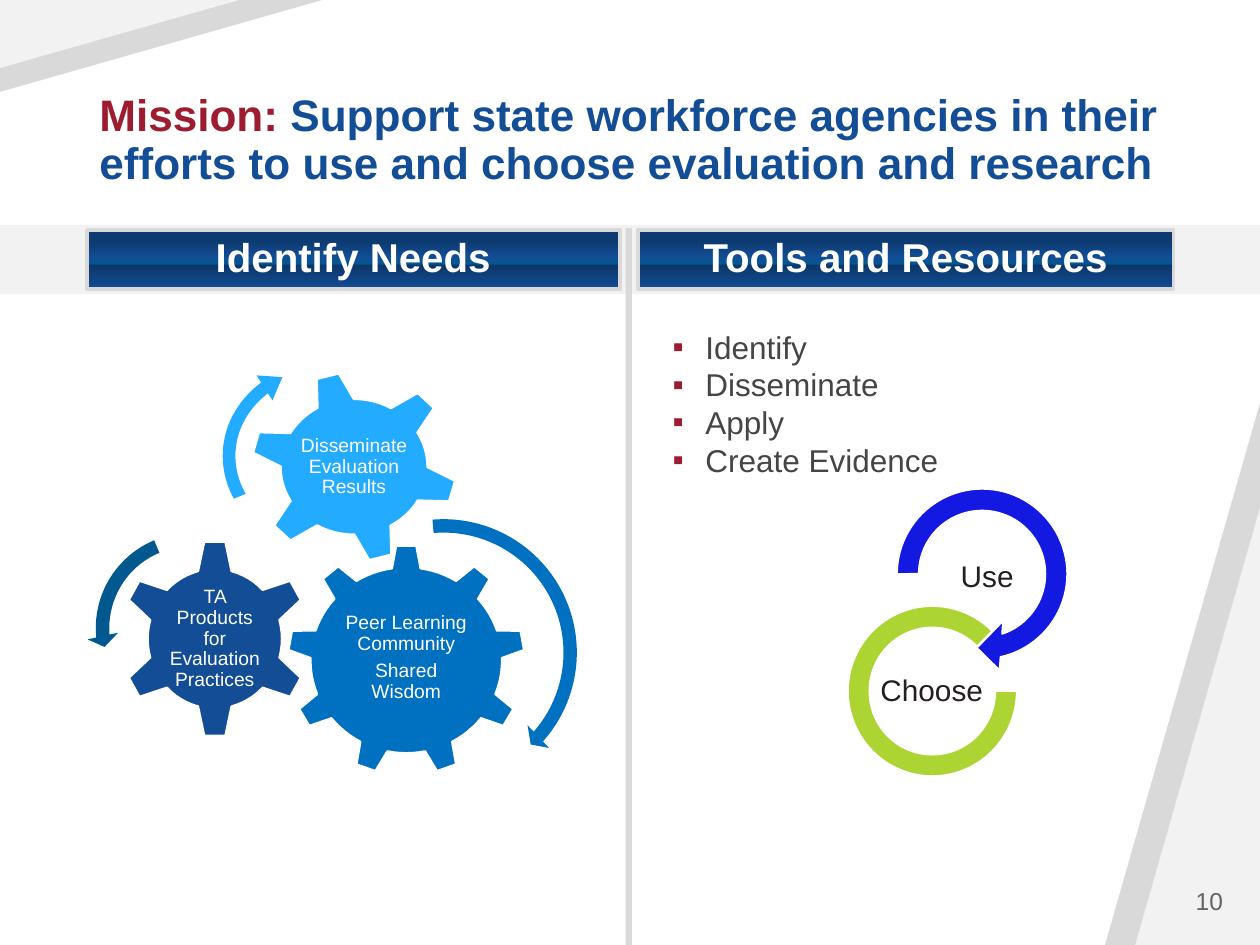
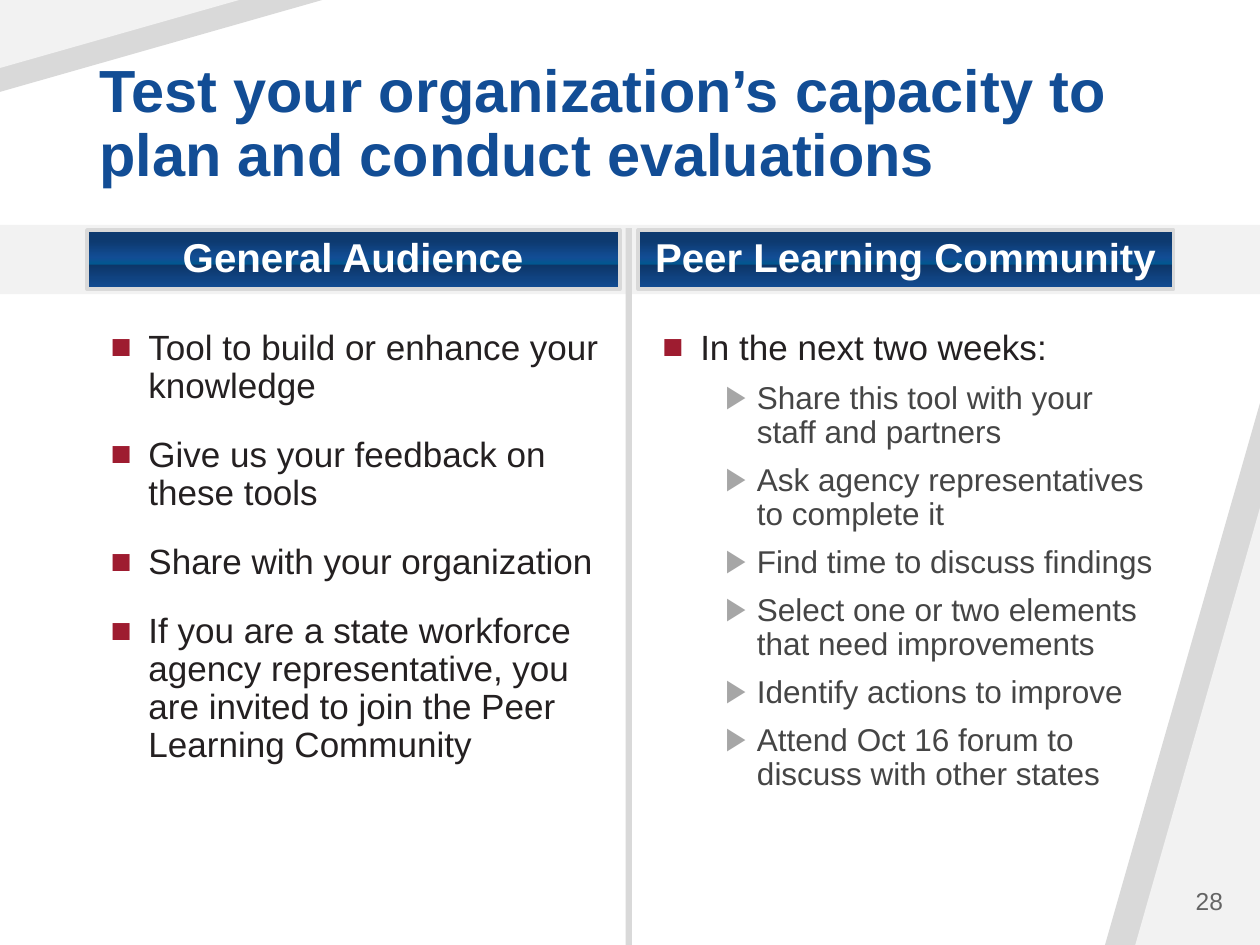
import dataclasses
import math
import typing

import lxml.etree
import pptx
import pptx.dml.color
import pptx.enum.shapes
import pptx.enum.text
import pptx.oxml.ns
import pptx.util

SHAPE = pptx.enum.shapes.MSO_SHAPE
ALIGN = pptx.enum.text.PP_ALIGN
ANCHOR = pptx.enum.text.MSO_ANCHOR
qn = pptx.oxml.ns.qn

# The slide is a grid of 100 columns by 75 rows of square cells.
COLUMNS, ROWS = 100, 75
CELL = pptx.util.Inches(10) / COLUMNS


@dataclasses.dataclass(frozen=True)
class Theme:
    font: str = "Arial"
    white: str = "FFFFFF"
    ink: str = "242021"
    soft_ink: str = "454545"
    number_grey: str = "646464"
    marker_grey: str = "A6A6A6"
    dark_band: str = "D9D9D9"
    light_band: str = "F2F2F2"
    red: str = "9E1C30"
    navy: str = "124D95"
    teal: str = "00588F"
    blue: str = "0070C0"
    sky: str = "23ACFF"
    violet: str = "1419E2"
    green: str = "ACD433"
    header_stops: tuple = ((19, "0D3A70"), (47, "124D95"), (58, "00588F"),
                           (59, "0D3668"), (100, "124D95"))
    mission_size: float = 25.2
    title_size: float = 34
    header_size: float = 23
    body_size: float = 20
    detail_size: float = 18
    cycle_size: float = 17
    number_size: float = 14
    gear_size: float = 11


THEME = Theme()


class Box(typing.NamedTuple):
    """Left, top, width and height in grid cells."""
    left: float
    top: float
    width: float
    height: float


class Bullet(typing.NamedTuple):
    mark: str
    color: str
    indent: float
    hanging: float
    level: int = 0


@dataclasses.dataclass(frozen=True)
class Arc:
    kind: typing.Any
    box: Box
    adjustments: tuple
    color: str
    outline: typing.Optional[str] = None
    rotation: float = 0


@dataclasses.dataclass(frozen=True)
class Gear:
    center: tuple
    stretch: tuple  # horizontal and vertical factor
    teeth: int
    first_angle: float
    tip: tuple      # distance from the centre, half width
    root: tuple
    color: str
    insets: tuple
    lines: tuple


SQUARE = Bullet("■", THEME.red, 3, 3)
SMALL_SQUARE = Bullet("▪", THEME.red, 2.6, 2.6)
TRIANGLE = Bullet("▶", THEME.marker_grey, 7.5, 2.5, level=1)
TITLE_BOX = Box(6.9, 4, 86.2, 11.5)
HEADER_BOXES = (Box(6.9, 18.25, 42.3, 4.7), Box(50.65, 18.25, 42.5, 4.7))
BODY_BOXES = (Box(7.8, 25.7, 41, 42), Box(51.6, 25.7, 41, 42))
NUMBER_BOX = Box(84.05, 69.5, 14, 4)


def cells(count: float) -> int:
    return round(count * CELL)


def rgb(color: str):
    return pptx.dml.color.RGBColor.from_string(color)


# Text
def set_bullet(paragraph, bullet: Bullet) -> None:
    paragraph.level = bullet.level
    properties = paragraph._p.get_or_add_pPr()
    properties.set("marL", str(cells(bullet.indent)))
    properties.set("indent", str(-cells(bullet.hanging)))
    color = lxml.etree.SubElement(properties, qn("a:buClr"))
    lxml.etree.SubElement(color, qn("a:srgbClr"), val=bullet.color)
    lxml.etree.SubElement(properties, qn("a:buFont"), typeface=THEME.font)
    lxml.etree.SubElement(properties, qn("a:buChar"), char=bullet.mark)


def add_paragraph(shape, text: str, *, size: float, color: str, bold: bool = False,
                  align=ALIGN.LEFT, line_spacing: float = 0.9, before: float = 0,
                  after: float = 0, bullet: typing.Optional[Bullet] = None,
                  lead: str = "", lead_color: str = "") -> None:
    frame = shape.text_frame
    is_first = not frame.paragraphs[0].runs
    paragraph = frame.paragraphs[0] if is_first else frame.add_paragraph()
    if bullet:
        set_bullet(paragraph, bullet)
    paragraph.alignment = align
    paragraph.line_spacing = line_spacing
    paragraph.space_before = pptx.util.Pt(0 if is_first else before)
    paragraph.space_after = pptx.util.Pt(after)
    for words, run_color in ((lead, lead_color), (text, color)):
        if words:
            run = paragraph.add_run()
            run.text = words
            run.font.name = THEME.font
            run.font.size = pptx.util.Pt(size)
            run.font.bold = bold
            run.font.color.rgb = rgb(run_color)


def set_frame(shape, anchor, insets: tuple) -> None:
    frame = shape.text_frame
    frame.word_wrap = True
    frame.vertical_anchor = anchor
    (frame.margin_left, frame.margin_top,
     frame.margin_right, frame.margin_bottom) = map(cells, insets)


def add_text_box(slide, box: Box, anchor=ANCHOR.TOP, insets: tuple = (1, 0.5, 1, 0.5)):
    text_box = slide.shapes.add_textbox(*map(cells, box))
    set_frame(text_box, anchor, insets)
    return text_box


# Shapes
def paint(shape, color: str, outline: typing.Optional[str] = None, width: float = 1) -> None:
    shape.shadow.inherit = False
    shape.fill.solid()
    shape.fill.fore_color.rgb = rgb(color)
    if outline:
        shape.line.color.rgb = rgb(outline)
        shape.line.width = pptx.util.Pt(width)
    else:
        shape.line.fill.background()


def add_shape(slide, kind, box: Box, color: str, outline: typing.Optional[str] = None,
              width: float = 1, adjustments: tuple = (), rotation: float = 0):
    shape = slide.shapes.add_shape(kind, *map(cells, box))
    for index, value in enumerate(adjustments):
        shape.adjustments[index] = value
    shape.rotation = rotation
    paint(shape, color, outline, width)
    return shape


def set_header_gradient(shape) -> None:
    shape.fill.gradient()
    shape.fill.gradient_angle = 270
    stops = shape._element.spPr.find(qn("a:gradFill")).find(qn("a:gsLst"))
    for stop in list(stops):
        stops.remove(stop)
    for percent, color in THEME.header_stops:
        stop = lxml.etree.SubElement(stops, qn("a:gs"), pos=str(percent * 1000))
        lxml.etree.SubElement(stop, qn("a:srgbClr"), val=color)


def gear_points(gear: Gear) -> list:
    """Outline of the teeth, joined by short steps along the root circle."""
    def place(angle: float, distance: float, offset: float) -> tuple:
        sine, cosine = math.sin(angle), math.cos(angle)
        across = distance * sine + offset * cosine
        down = offset * sine - distance * cosine
        return (cells(gear.center[0] + across * gear.stretch[0]),
                cells(gear.center[1] + down * gear.stretch[1]))

    pitch = math.tau / gear.teeth
    radius = math.hypot(*gear.root)
    half_root = math.atan2(gear.root[1], gear.root[0])
    steps = 6
    points = []
    for tooth in range(gear.teeth):
        angle = math.radians(gear.first_angle) + tooth * pitch
        for (distance, half), side in ((gear.root, -1), (gear.tip, -1),
                                       (gear.tip, 1), (gear.root, 1)):
            points.append(place(angle, distance, side * half))
        for step in range(1, steps):
            along = half_root + (pitch - 2 * half_root) * step / steps
            points.append(place(angle + along, radius, 0))
    return points


def add_gear(slide, gear: Gear) -> None:
    start, *others = gear_points(gear)
    builder = slide.shapes.build_freeform(*start, scale=1.0)
    builder.add_line_segments(others, close=True)
    shape = builder.convert_to_shape()
    paint(shape, gear.color, THEME.white)
    set_frame(shape, ANCHOR.MIDDLE, gear.insets)
    for line in gear.lines:
        add_paragraph(shape, line, size=THEME.gear_size, color=THEME.white,
                      align=ALIGN.CENTER, after=3.85)


def add_arc(slide, arc: Arc) -> None:
    add_shape(slide, arc.kind, arc.box, arc.color, arc.outline,
              adjustments=arc.adjustments, rotation=arc.rotation)


# Parts shared by both slides
def add_background(slide) -> None:
    # Right corner
    for width, height, color in ((12.3, 43, THEME.dark_band), (9.9, 34.7, THEME.light_band)):
        add_shape(slide, SHAPE.ISOSCELES_TRIANGLE,
                  Box(COLUMNS - width, ROWS - height, width, height), color, adjustments=(1,))
    # Left corner: a mirrored triangle turned onto its side
    for width, height, color in ((25.6, 7.3, THEME.dark_band), (19, 5.4, THEME.light_band)):
        shift = (width - height) / 2
        corner = add_shape(slide, SHAPE.ISOSCELES_TRIANGLE, Box(shift, -shift, height, width),
                           color, adjustments=(1,), rotation=270)
        corner._element.spPr.find(qn("a:xfrm")).set("flipV", "1")
    # Header band and column divider
    add_shape(slide, SHAPE.RECTANGLE, Box(0, 17.85, COLUMNS, 5.5), THEME.light_band)
    add_shape(slide, SHAPE.RECTANGLE, Box(49.65, 18.1, 0.5, ROWS - 18.1), THEME.dark_band)


def add_column_slide(presentation, title: str, title_size: float, headers: tuple,
                     number: str, lead: str = ""):
    slide = presentation.slides.add_slide(presentation.slide_layouts[6])
    add_background(slide)
    add_paragraph(add_text_box(slide, TITLE_BOX, ANCHOR.BOTTOM), title, size=title_size,
                  color=THEME.navy, bold=True, lead=lead, lead_color=THEME.red)
    for box, header in zip(HEADER_BOXES, headers):
        shape = add_shape(slide, SHAPE.RECTANGLE, box, THEME.navy, THEME.dark_band, 2)
        set_header_gradient(shape)
        set_frame(shape, ANCHOR.MIDDLE, (0.5, 0.6, 0.5, 0.6))
        add_paragraph(shape, header, size=THEME.header_size, color=THEME.white,
                      bold=True, align=ALIGN.CENTER)
    add_paragraph(add_text_box(slide, NUMBER_BOX, ANCHOR.MIDDLE), number,
                  size=THEME.number_size, color=THEME.number_grey,
                  align=ALIGN.RIGHT, line_spacing=1.0)
    return slide


# Slide content
CYCLE_ARCS = (
    Arc(SHAPE.CIRCULAR_ARROW, Box(70.1, 37.7, 15.7, 15.7),
        (0.11, 11.42, 45, 108, 0.125), THEME.violet, THEME.white),
    Arc(SHAPE.BLOCK_ARC, Box(67.3, 48.1, 13.4, 13.5), (0, 189, 0.127), THEME.green, THEME.white),
)
CYCLE_LABELS = (("Use", Box(74, 43.7, 8.7, 4.4)), ("Choose", Box(69.6, 52.7, 8.7, 4.4)))
GEARS = (
    Gear((32.25, 52.4), (1.02, 0.99), 9, 0, (9.15, 0.77), (7.35, 1.1), THEME.blue,
         (4.1, 4.8, 4.1, 4.9), ("Peer Learning Community", "Shared Wisdom")),
    Gear((17.05, 50.7), (0.97, 1.01), 6, 0, (7.6, 0.85), (5.3, 1.35), THEME.navy,
         (2.8, 3, 2.8, 3), ("TA Products for Evaluation Practices",)),
    Gear((28.1, 37.05), (1.05, 0.97), 6, -15, (7.65, 0.85), (5.35, 1.4), THEME.sky,
         (2.8, 3, 2.8, 3), ("Disseminate Evaluation Results",)),
)
GEAR_ARROWS = (
    Arc(SHAPE.CIRCULAR_ARROW, Box(23.9, 40.5, 22.6, 22.6),
        (0.047, 2.99, 24.91, 159.17, 0.055), THEME.blue),
    Arc(SHAPE.LEFT_CIRCULAR_ARROW, Box(6.9, 41.6, 16.5, 16.5),
        (0.065, 4.3, 104.89, 148.38, 0.075), THEME.teal),
    Arc(SHAPE.CIRCULAR_ARROW, Box(17, 27.9, 18.9, 16.8),
        (0.06, 7.38, 133.14, 92.4, 0.07), THEME.sky, rotation=3.4),
)
RESOURCES = ("Identify", "Disseminate", "Apply", "Create Evidence")
AUDIENCE_POINTS = (
    "Tool to build or enhance your knowledge",
    "Give us your feedback on these tools",
    "Share with your organization",
    "If you are a state workforce agency representative, you are invited to join "
    "the Peer Learning Community",
)
COMMUNITY_STEPS = (
    "Share this tool with your staff and partners",
    "Ask agency representatives to complete it",
    "Find time to discuss findings",
    "Select one or two elements that need improvements",
    "Identify actions to improve",
    "Attend Oct 16 forum to discuss with other states",
)


def build_mission_slide(presentation) -> None:
    slide = add_column_slide(
        presentation, "Support state workforce agencies in their efforts to use and "
        "choose evaluation and research", THEME.mission_size,
        ("Identify Needs", "Tools and Resources"), "10", lead="Mission: ")
    for arc in CYCLE_ARCS:
        add_arc(slide, arc)
    for label, box in CYCLE_LABELS:
        add_paragraph(add_text_box(slide, box, ANCHOR.MIDDLE, (0.1,) * 4), label,
                      size=THEME.cycle_size, color=THEME.ink, align=ALIGN.CENTER, after=5.95)
    for gear in GEARS:
        add_gear(slide, gear)
    for arrow in GEAR_ARROWS:
        add_arc(slide, arrow)
    resources = add_text_box(slide, Box(52.4, 25.5, 29.1, 13.1))
    for resource in RESOURCES:
        add_paragraph(resources, resource, size=THEME.detail_size, color=THEME.soft_ink,
                      line_spacing=1.0, bullet=SMALL_SQUARE)


def build_capacity_slide(presentation) -> None:
    slide = add_column_slide(
        presentation, "Test your organization’s capacity to plan and conduct evaluations",
        THEME.title_size, ("General Audience", "Peer Learning Community"), "28")
    audience, community = (add_text_box(slide, box) for box in BODY_BOXES)
    main_points = [(audience, point) for point in AUDIENCE_POINTS]
    for column, point in main_points + [(community, "In the next two weeks:")]:
        add_paragraph(column, point, size=THEME.body_size, color=THEME.ink,
                      before=18, bullet=SQUARE)
    for step in COMMUNITY_STEPS:
        add_paragraph(community, step, size=THEME.detail_size, color=THEME.soft_ink,
                      before=8, bullet=TRIANGLE)


def main() -> None:
    presentation = pptx.Presentation()
    presentation.slide_width = cells(COLUMNS)
    presentation.slide_height = cells(ROWS)
    build_mission_slide(presentation)
    build_capacity_slide(presentation)
    presentation.save("out.pptx")


if __name__ == "__main__":
    main()
